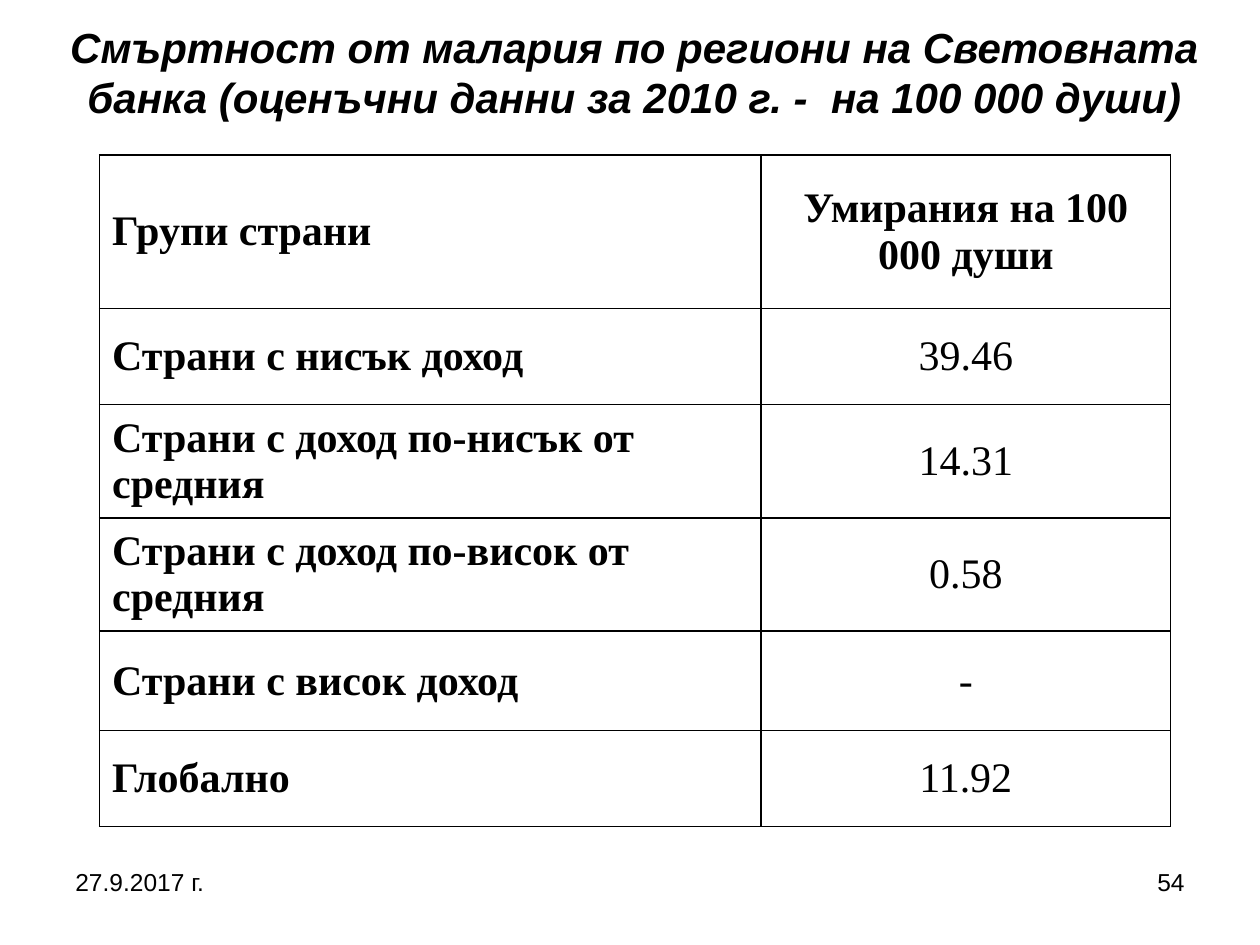
from lxml import etree
from pptx import Presentation
from pptx.dml.color import RGBColor
from pptx.enum.text import MSO_ANCHOR, PP_ALIGN
from pptx.oxml.ns import qn
from pptx.util import Inches, Pt

LEFT, CENTER, RIGHT = PP_ALIGN.LEFT, PP_ALIGN.CENTER, PP_ALIGN.RIGHT
MIDDLE = MSO_ANCHOR.MIDDLE
TITLE_ONLY = 5

WIDTH, HEIGHT = 10, 7.5
BLACK = "000000"
FOOTER_TOP, FOOTER_WIDTH, FOOTER_HEIGHT = 6.83, 2.33, 0.52
FOOTER_MARGIN = 0.5

COLUMN_WIDTHS = [5.25, 3.25]
ROW_HEIGHTS = [1.22, 0.76, 0.9, 0.9, 0.79, 0.76]
DEATH_RATES = [
    ("Групи страни", "Умирания на 100 000 души"),
    ("Страни с нисък доход", "39.46"),
    ("Страни с доход по-нисък от средния", "14.31"),
    ("Страни с доход по-висок от средния", "0.58"),
    ("Страни с висок доход", "-"),
    ("Глобално", "11.92"),
]


def color(hex_value):
    return RGBColor.from_string(hex_value)


def write(frame, text, size=24, font="Arial", bold=False, italic=False, align=LEFT):
    frame.word_wrap = True
    paragraph = frame.paragraphs[0]
    paragraph.alignment = align
    run = paragraph.add_run()
    run.text = text
    run.font.size = Pt(size)
    run.font.name = font
    run.font.bold = bold
    run.font.italic = italic
    run.font.color.rgb = color(BLACK)


def add_title(slide, text):
    title = slide.shapes.title
    title.left, title.top = Inches(0.43), Inches(0.12)
    title.width, title.height = Inches(9.21), Inches(0.9)
    title.text_frame.vertical_anchor = MIDDLE
    write(title.text_frame, text, bold=True, italic=True, align=CENTER)


def add_footer(slide, text, left, align):
    box = slide.shapes.add_textbox(Inches(left), Inches(FOOTER_TOP),
                                   Inches(FOOTER_WIDTH), Inches(FOOTER_HEIGHT))
    write(box.text_frame, text, size=14, align=align)


def outline_cell(cell, width=1):
    """Draw all four borders; they must come before the fill in the XML."""
    properties = cell._tc.get_or_add_tcPr()
    for position, side in enumerate(("lnL", "lnR", "lnT", "lnB")):
        line = etree.Element(qn(f"a:{side}"), w=str(Pt(width)))
        fill = etree.SubElement(line, qn("a:solidFill"))
        etree.SubElement(fill, qn("a:srgbClr"), val=BLACK)
        properties.insert(position, line)


def add_rate_table(slide):
    table = slide.shapes.add_table(
        len(DEATH_RATES), len(COLUMN_WIDTHS), Inches(0.79), Inches(1.23),
        Inches(sum(COLUMN_WIDTHS)), Inches(sum(ROW_HEIGHTS))).table
    table.first_row = table.horz_banding = False
    for column, width in zip(table.columns, COLUMN_WIDTHS):
        column.width = Inches(width)
    for row, height in zip(table.rows, ROW_HEIGHTS):
        row.height = Inches(height)
    for r, entries in enumerate(DEATH_RATES):
        for c, entry in enumerate(entries):
            cell = table.cell(r, c)
            cell.vertical_anchor = MIDDLE
            cell.fill.background()
            outline_cell(cell)
            write(cell.text_frame, entry, font="Times New Roman",
                  bold=r == 0 or c == 0, align=CENTER if c else LEFT)


def main():
    deck = Presentation()
    deck.slide_width, deck.slide_height = Inches(WIDTH), Inches(HEIGHT)
    slide = deck.slides.add_slide(deck.slide_layouts[TITLE_ONLY])
    add_title(slide, "Смъртност от малария по региони на Световната банка "
                     "(оценъчни данни за 2010 г. -  на 100 000 души)")
    add_rate_table(slide)
    add_footer(slide, "27.9.2017 г.", FOOTER_MARGIN, LEFT)
    add_footer(slide, "54", WIDTH - FOOTER_MARGIN - FOOTER_WIDTH, RIGHT)
    deck.save("out.pptx")


if __name__ == "__main__":
    main()
